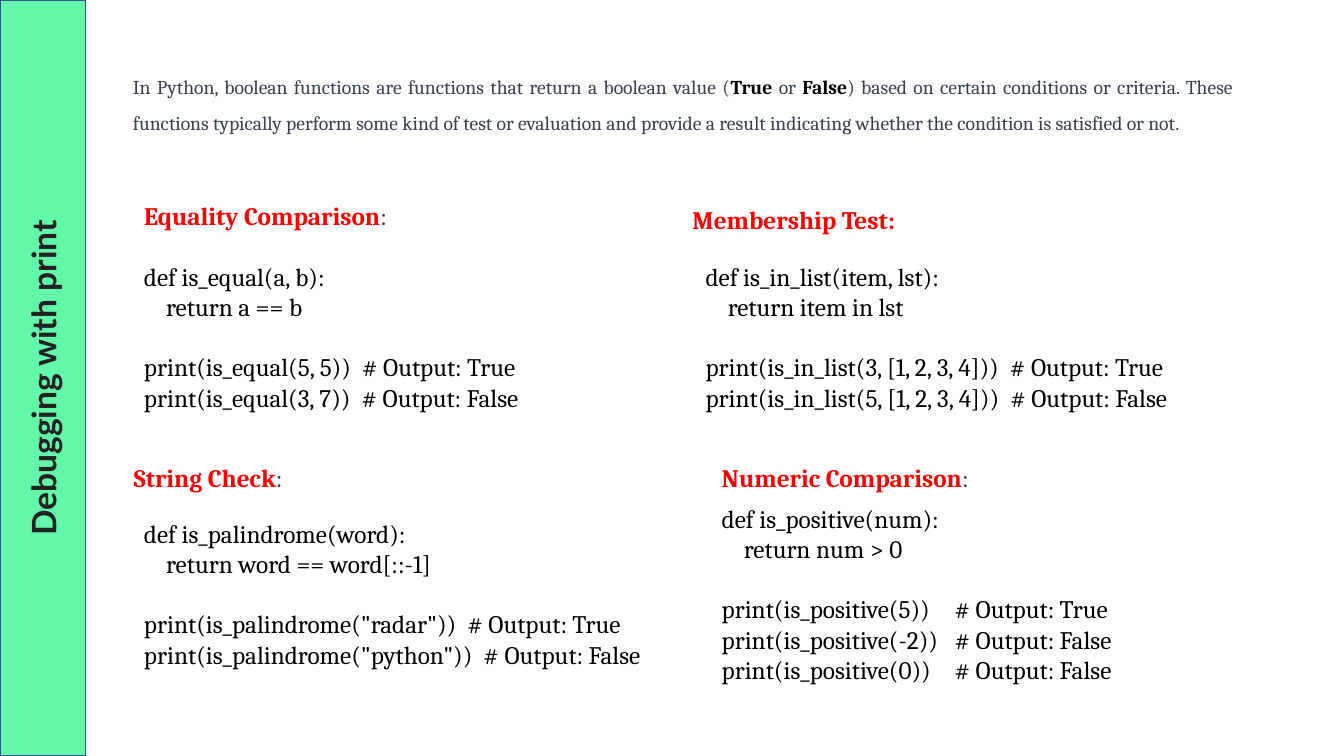
from pptx import Presentation
from pptx.dml.color import RGBColor
from pptx.enum.shapes import MSO_SHAPE
from pptx.enum.text import MSO_ANCHOR, MSO_AUTO_SIZE, PP_ALIGN
from pptx.oxml.ns import qn
from pptx.util import Inches, Pt
from lxml.etree import SubElement

MINT = RGBColor(0x63, 0xF7, 0xA9)
NAVY = RGBColor(0x32, 0x54, 0x91)
CHARCOAL = RGBColor(0x22, 0x22, 0x22)
SLATE = RGBColor(0x37, 0x41, 0x51)
RED = RGBColor(0xFF, 0x00, 0x00)
BLACK = RGBColor(0x00, 0x00, 0x00)
WHITE = RGBColor(0xFF, 0xFF, 0xFF)

TITLE = {"name": "Lato", "size": Pt(24), "bold": True}
INTRO = {"name": "Cambria", "size": Pt(14), "bold": False}
INTRO_VALUE = INTRO | {"bold": True}
CODE = {"name": "Cambria", "size": Pt(18), "bold": False}
HEADING = CODE | {"bold": True}

CODE_INDENT = Inches(0.22)
STATEMENT_GAP = Pt(21.6)
COMMENT_TAB = Inches(2.31)

INTRO_PARTS = [
    ("In Python, boolean functions are functions that return a boolean value (", INTRO, SLATE),
    ("True", INTRO_VALUE, BLACK),
    (" or ", INTRO, SLATE),
    ("False", INTRO_VALUE, BLACK),
    (") based on certain conditions or criteria. These functions typically perform some "
     "kind of test or evaluation and provide a result indicating whether the condition "
     "is satisfied or not. ", INTRO, SLATE),
]

# Heading parts and box, then code box, signature, body and calls
EXAMPLES = [
    (("Equality Comparison", ":"), (1.33, 1.94, 2.92, 0.4), (1.33, 2.54, 5.2, 1.62),
     "def is_equal(a, b):", "return a == b",
     ["print(is_equal(5, 5))  # Output: True",
      "print(is_equal(3, 7))  # Output: False"]),
    (("Membership Test:", ""), (6.77, 1.98, 2.67, 0.4), (6.9, 2.54, 5.84, 1.62),
     "def is_in_list(item, lst):", "return item in lst",
     ["print(is_in_list(3, [1, 2, 3, 4]))  # Output: True",
      "print(is_in_list(5, [1, 2, 3, 4]))  # Output: False"]),
    (("String Check", ":"), (1.23, 4.54, 2.92, 0.4), (1.33, 5.09, 5.33, 1.62),
     "def is_palindrome(word):", "return word == word[::-1]",
     ['print(is_palindrome("radar"))  # Output: True',
      'print(is_palindrome("python"))  # Output: False']),
    (("Numeric Comparison", ":"), (7.06, 4.54, 2.92, 0.4), (7.06, 4.94, 5.27, 1.92),
     "def is_positive(num):", "return num > 0",
     ["print(is_positive(5))\t# Output: True",
      "print(is_positive(-2))\t# Output: False",
      "print(is_positive(0))\t# Output: False"]),
]


def apply_format(target, values):
    for attribute, value in values.items():
        setattr(target, attribute, value)


class LessonSlide:
    def __init__(self, slide):
        self.slide = slide

    def add_runs(self, paragraph, parts):
        """Add (text, font format, colour) parts as runs."""
        for text, font_format, color in parts:
            run = paragraph.add_run()
            run.text = text
            apply_format(run.font, font_format)
            run.font.color.rgb = color

    def panel(self, box, fill, parts, paragraph_format, outline=None):
        panel = self.slide.shapes.add_shape(MSO_SHAPE.RECTANGLE, *map(Inches, box))
        panel.shadow.inherit = False
        panel.fill.solid()
        panel.fill.fore_color.rgb = fill
        if outline is None:
            panel.line.fill.background()
        else:
            panel.line.color.rgb = outline
            panel.line.width = Pt(1)
        frame = panel.text_frame
        apply_format(frame, {"word_wrap": True, "vertical_anchor": MSO_ANCHOR.MIDDLE})
        apply_format(frame.paragraphs[0], paragraph_format)
        self.add_runs(frame.paragraphs[0], parts)
        return frame

    def sidebar(self, title):
        frame = self.panel((0, 0, 0.85, 7.5), MINT, [(title, TITLE, CHARCOAL)],
                           {"alignment": PP_ALIGN.CENTER}, NAVY)
        frame._txBody.bodyPr.set("vert", "vert270")

    def introduction(self, parts):
        self.panel((1.22, 0.42, 11.11, 1.12), WHITE, parts,
                   {"alignment": PP_ALIGN.JUSTIFY, "line_spacing": 1.5})

    def text_box(self, box):
        frame = self.slide.shapes.add_textbox(*map(Inches, box)).text_frame
        apply_format(frame, {"word_wrap": True, "auto_size": MSO_AUTO_SIZE.SHAPE_TO_FIT_TEXT})
        return frame

    def heading(self, box, title, colon):
        parts = [(title, HEADING, RED)]
        if colon:
            parts.append((colon, CODE, SLATE))
        self.add_runs(self.text_box(box).paragraphs[0], parts)

    def code(self, box, signature, body, calls):
        frame = self.text_box(box)
        self.add_runs(frame.paragraphs[0], [(signature, CODE, BLACK)])
        body_line = frame.add_paragraph()
        body_line._p.get_or_add_pPr().set("marL", str(CODE_INDENT))
        self.add_runs(body_line, [(body, CODE, BLACK)])
        for index, call in enumerate(calls):
            call_line = frame.add_paragraph()
            if index == 0:
                call_line.space_before = STATEMENT_GAP
            if "\t" in call:
                tabs = SubElement(call_line._p.get_or_add_pPr(), qn("a:tabLst"))
                SubElement(tabs, qn("a:tab"), pos=str(COMMENT_TAB), algn="l")
            self.add_runs(call_line, [(call, CODE, BLACK)])


def main():
    presentation = Presentation()
    presentation.slide_width = Inches(13.33)
    presentation.slide_height = Inches(7.5)
    lesson = LessonSlide(presentation.slides.add_slide(presentation.slide_layouts[6]))
    lesson.sidebar("Debugging with print")
    lesson.introduction(INTRO_PARTS)
    for heading, heading_box, code_box, signature, body, calls in EXAMPLES:
        lesson.heading(heading_box, *heading)
        lesson.code(code_box, signature, body, calls)
    presentation.save("out.pptx")


if __name__ == "__main__":
    main()
